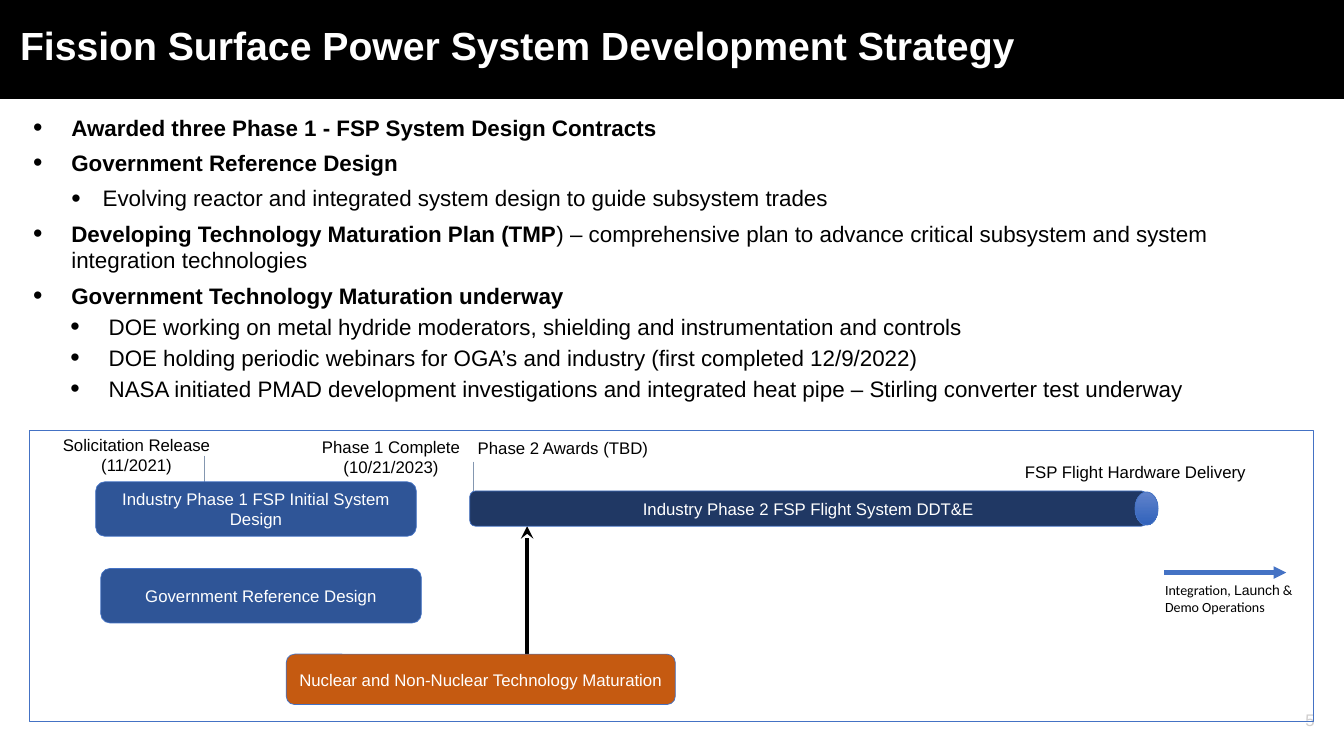
from lxml import etree
from pptx import Presentation
from pptx.dml.color import RGBColor
from pptx.enum.shapes import MSO_CONNECTOR as Link, MSO_SHAPE as Shape
from pptx.enum.text import MSO_ANCHOR as Anchor, PP_ALIGN as Align
from pptx.oxml.ns import qn
from pptx.util import Inches, Pt

BLACK = RGBColor(0x00, 0x00, 0x00)
WHITE = RGBColor(0xFF, 0xFF, 0xFF)
GRAY = RGBColor(0xD0, 0xCE, 0xCE)
SLATE = RGBColor(0x84, 0x97, 0xB0)
BLUE = RGBColor(0x44, 0x72, 0xC4)
NAVY = RGBColor(0x20, 0x38, 0x64)
ROYAL = RGBColor(0x2F, 0x55, 0x97)
RUST = RGBColor(0xC5, 0x5A, 0x11)
SKY = RGBColor(0x61, 0x83, 0xCB)
COBALT = RGBColor(0x30, 0x62, 0xBB)

COLS, ROWS = 40, 22.5
CELL = Inches(13.33) / COLS

# Level, bold part, plain part, space before and after
POINTS = [
    (0, "Awarded three Phase 1 - FSP System Design Contracts", "", 3),
    (0, "Government Reference Design", "", 3),
    (1, "", "Evolving reactor and integrated system design to guide subsystem trades", 3),
    (0, "Developing Technology Maturation Plan (TMP",
     ") – comprehensive plan to advance critical subsystem and system integration technologies", 3),
    (0, "Government Technology Maturation underway", "", 3),
    (2, "", "DOE working on metal hydride moderators, shielding and instrumentation and controls", 0),
    (2, "", "DOE holding periodic webinars for OGA’s and industry (first completed 12/9/2022)", 3),
    (2, "", "NASA initiated PMAD development investigations and integrated heat pipe – "
     "Stirling converter test underway", 0),
]
INDENTS = [(0.38, 0.38), (0.69, 0.31), (0.75, 0.38)]

# Column, row, width and height inside the panel
BARS = [
    ("Industry Phase 1 FSP Initial System Design", ROYAL, (1.98, 1.53, 9.54, 1.62)),
    ("Industry Phase 2 FSP Flight System DDT&E", NAVY, (13.11, 1.8, 20.16, 1.05)),
    ("Nuclear and Non-Nuclear Technology Maturation", RUST, (7.65, 6.66, 11.58, 1.5)),
    ("Government Reference Design", ROYAL, (2.13, 4.11, 9.54, 1.62)),
]
LABELS = [
    (["Solicitation Release (11/2021)"], Align.CENTER, (0.42, -0.03, 5.55, 1.5)),
    (["Phase 1 Complete", "(10/21/2023)"], Align.CENTER, (7.74, 0.03, 6.06, 1.5)),
    (["Phase 2 Awards (TBD)"], Align.CENTER, (11.61, 0.06, 8.55, 0.9)),
    (["FSP Flight Hardware Delivery"], Align.LEFT, (29.34, 0.78, 7.86, 0.9)),
]
# Start, end, colour, width, arrowhead
LINES = [
    ((14.82, 6.66), (14.82, 2.85), BLACK, 3, "stealth"),
    ((5.22, 0.75), (5.22, 1.53), SLATE, 1, None),
    ((13.23, 0.93), (13.23, 1.83), SLATE, 1, None),
    ((33.78, 4.23), (37.41, 4.23), BLUE, 3, "triangle"),
]


def grid(*cells):
    return [round(cell * CELL) for cell in cells]


def inside(box, part):
    return (box[0] + part[0], box[1] + part[1], *part[2:])


def style(para, size, color, align=Align.LEFT, bold=None):
    para.alignment = align
    font = para.font
    font.name, font.size, font.bold = "Arial", Pt(size), bold
    font.color.rgb = color


def add_text(slide, box, lines, size, color, align=Align.LEFT, bold=None):
    frame = slide.shapes.add_textbox(*grid(*box)).text_frame
    frame.word_wrap = True
    frame.text = "\n".join(lines)
    for para in frame.paragraphs:
        style(para, size, color, align, bold)
    return frame


def add_block(slide, kind, box, fill=None, edge=None):
    block = slide.shapes.add_shape(kind, *grid(*box))
    block.shadow.inherit = False
    if fill is None:
        block.fill.background()
    else:
        block.fill.solid()
        block.fill.fore_color.rgb = fill
    if edge is None:
        block.line.fill.background()
    else:
        block.line.color.rgb = edge
        block.line.width = Pt(0.5)
    return block


def add_line(slide, start, end, color, width, head):
    line = slide.shapes.add_connector(Link.STRAIGHT, *grid(*start, *end))
    line.line.color.rgb = color
    line.line.width = Pt(width)
    if head:
        etree.SubElement(line.line._get_or_add_ln(), qn("a:tailEnd"), type=head)
    etree.SubElement(line._element.spPr, qn("a:effectLst"))


def add_bullet(para, left, hang):
    props = para._p.get_or_add_pPr()
    props.set("marL", str(Inches(left)))
    props.set("indent", str(-Inches(hang)))
    etree.SubElement(props, qn("a:buSzPct"), val="120000")
    etree.SubElement(props, qn("a:buFont"), typeface="Arial")
    etree.SubElement(props, qn("a:buChar"), char="•")


def draw_header(slide, box):
    add_block(slide, Shape.RECTANGLE, box, BLACK)
    title = inside(box, (0.3, 0.48, 32.91, 1.71))
    add_text(slide, title, ["Fission Surface Power System Development Strategy"],
             28, WHITE, bold=True)


def draw_points(slide, box):
    frame = slide.shapes.add_textbox(*grid(*box)).text_frame
    frame.word_wrap = True
    for i, (level, strong, plain, gap) in enumerate(POINTS):
        para = frame.add_paragraph() if i else frame.paragraphs[0]
        para.level = min(level, 1)
        para.space_before = Pt(gap if i else 0)
        para.space_after = Pt(gap)
        add_bullet(para, *INDENTS[level])
        style(para, 16, BLACK, bold=bool(strong))
        for text, bold in ((strong, True), (plain, False)):
            if text:
                run = para.add_run()
                run.text = text
                run.font.bold = bold


def draw_timeline(slide, box):
    for start, end, *look in LINES:
        add_line(slide, inside(box, start), inside(box, end), *look)
    for text, fill, part in BARS:
        bar = add_block(slide, Shape.ROUNDED_RECTANGLE, inside(box, part), fill, BLUE)
        bar.text_frame.word_wrap = True
        bar.text_frame.vertical_anchor = Anchor.MIDDLE
        bar.text_frame.text = text
        style(bar.text_frame.paragraphs[0], 12, WHITE, Align.CENTER)
    cap = add_block(slide, Shape.OVAL, inside(box, (32.91, 1.83, 0.69, 0.99)), SKY, BLUE)
    cap.fill.gradient()
    cap.fill.gradient_angle = 270
    for stop, color in zip(cap.fill.gradient_stops, (SKY, COBALT)):
        stop.color.rgb = color
    for lines, align, part in LABELS:
        add_text(slide, inside(box, part), lines, 12, BLACK, align)
    launch = add_text(slide, inside(box, (33.51, 4.35, 5.04, 1.32)), [""], 10, BLACK)
    for text, face in (("Integration, ", "Calibri"), ("Launch", "Arial"),
                       (" & Demo Operations", "Calibri")):
        run = launch.paragraphs[0].add_run()
        run.text = text
        run.font.name = face
    add_block(slide, Shape.RECTANGLE, box, edge=BLUE)


def draw_number(slide, box):
    frame = add_text(slide, box, ["5"], 12, GRAY, Align.RIGHT)
    frame.vertical_anchor = Anchor.MIDDLE


def main():
    deck = Presentation()
    deck.slide_width, deck.slide_height = grid(COLS, ROWS)
    slide = deck.slides.add_slide(deck.slide_layouts[6])
    draw_header(slide, (0, 0, COLS, 2.94))
    draw_number(slide, (30.42, 20.82, 9, 1.2))
    draw_timeline(slide, (0.87, 12.81, 38.22, 8.67))
    draw_points(slide, (0.69, 3.24, 38.4, 8.97))
    deck.save("out.pptx")


if __name__ == "__main__":
    main()
